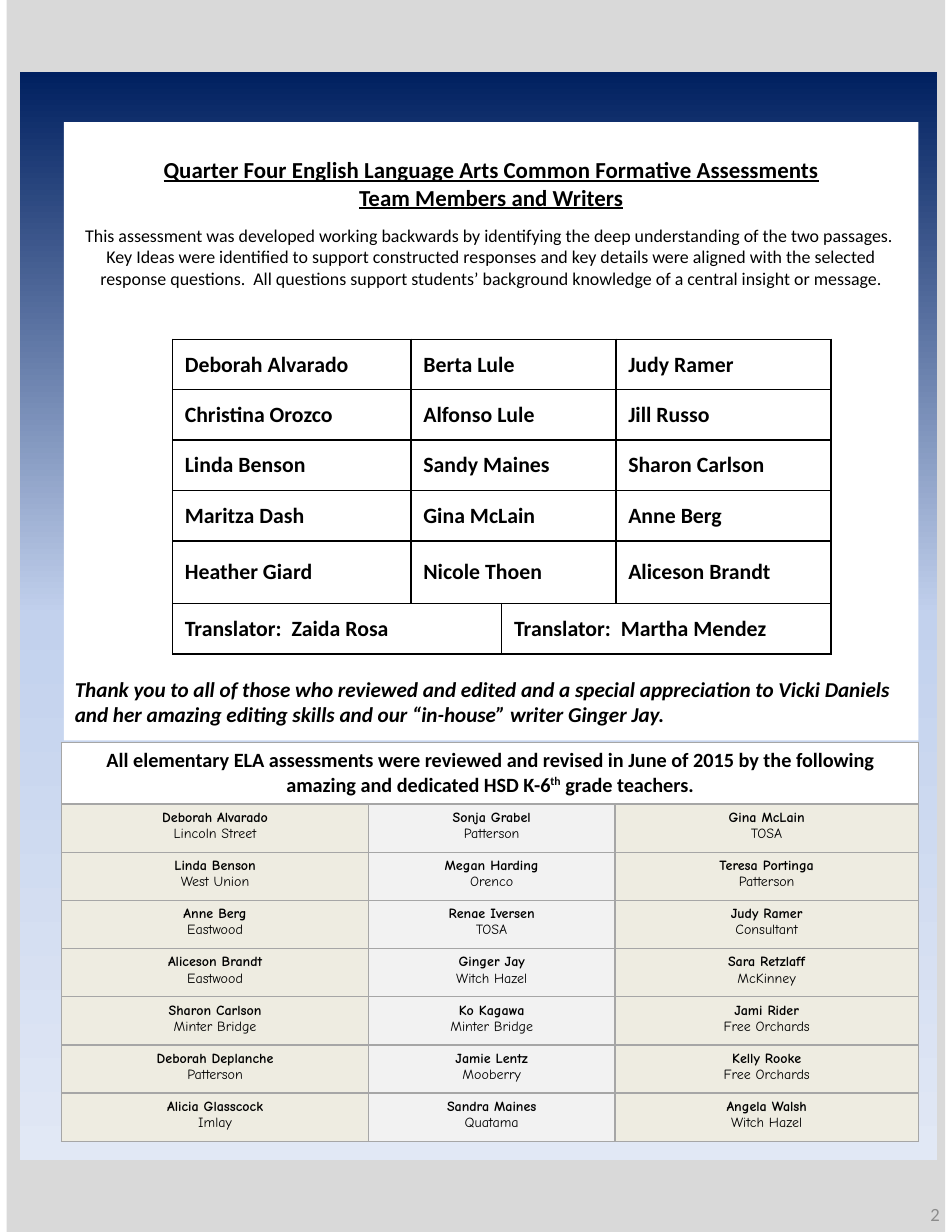
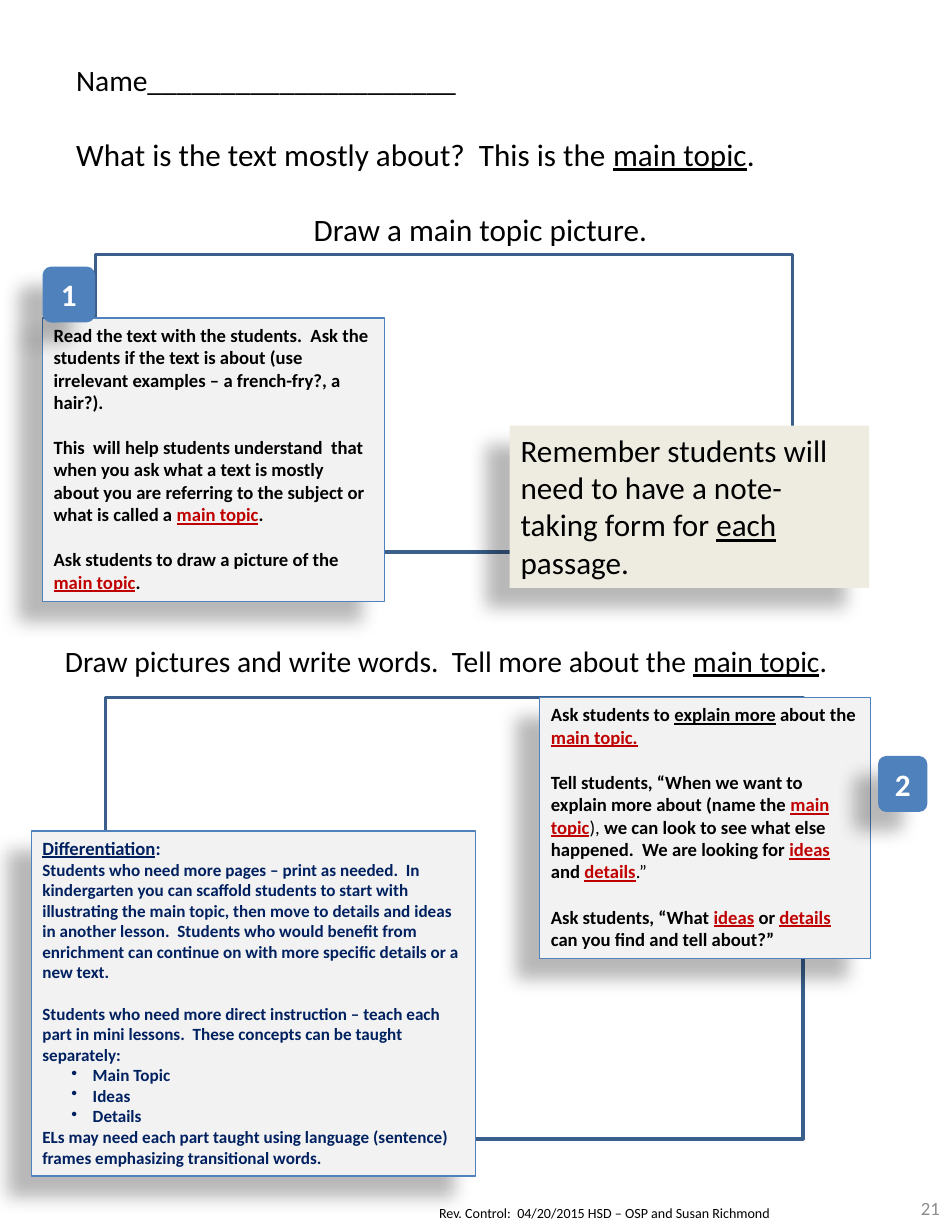
from copy import deepcopy

from lxml import etree
from pptx import Presentation
from pptx.dml.color import RGBColor
from pptx.enum.shapes import MSO_SHAPE
from pptx.enum.text import MSO_ANCHOR, PP_ALIGN
from pptx.oxml.ns import qn
from pptx.util import Inches, Pt

RECT, ROUNDED = MSO_SHAPE.RECTANGLE, MSO_SHAPE.ROUNDED_RECTANGLE
TOP, MIDDLE, BOTTOM = MSO_ANCHOR.TOP, MSO_ANCHOR.MIDDLE, MSO_ANCHOR.BOTTOM
LEFT, CENTER, RIGHT = PP_ALIGN.LEFT, PP_ALIGN.CENTER, PP_ALIGN.RIGHT

W, H = 8.5, 11
BODY, HAND = "Calibri", "Comic Neue"
COLORS = {
    "black": "000000", "white": "FFFFFF", "gray": "D9D9D9", "pale": "F2F2F2",
    "cream": "EEECE1", "number": "8C8C8C", "rule": "A6A6A6", "navy": "002060",
    "blue": "4F81BD", "frame": "3A5F8C", "red": "C00000",
    "sky": "C2D1ED", "mist": "E1E8F5",
}
BACKDROP = [(0, "navy"), (0.5, "sky"), (1, "mist")]

# Text is cut at "|"; a piece may open with one of these marks.
MARKS = {
    "u:": {"underline": True},
    "k:": {"underline": True, "color": "red"},
    "n:": {"bold": False},
    "^:": {"raised": True},
}

# Each paragraph is (text, options).
HEADING = dict(size=14.7, bold=True, underline=True, align=CENTER)
INTRO = [
    ("Quarter Four English Language Arts Common Formative Assessments", HEADING),
    ("Team Members and Writers", HEADING),
    ("This assessment was developed working backwards by identifying the deep "
     "understanding of the two passages.  Key Ideas were identified to support "
     "constructed responses and key details were aligned with the selected response "
     "questions.  All questions support students’ background knowledge of a central "
     "insight or message.", dict(size=11.5, align=CENTER, gap=8.9)),
]
THANKS = [
    ("Thank you to all of those who reviewed and edited and a special appreciation to "
     "Vicki Daniels and her amazing editing skills and our “in-house” writer Ginger Jay.",
     dict(size=13.6, bold=True, italic=True)),
]

WRITERS = [
    ("Deborah Alvarado", "Berta Lule", "Judy Ramer"),
    ("Christina Orozco", "Alfonso Lule", "Jill Russo"),
    ("Linda Benson", "Sandy Maines", "Sharon Carlson"),
    ("Maritza Dash", "Gina McLain", "Anne Berg"),
    ("Heather Giard", "Nicole Thoen", "Aliceson Brandt"),
    ("Translator:  Zaida Rosa", "Translator:  Martha Mendez"),
]
WRITER_COLS = [2.13, 0.81, 1.02, 1.92]
WRITER_ROWS = [0.45] * 4 + [0.56, 0.45]
WRITER_SPANS = {3: (1, 2, 1), 2: (2, 2)}  # grid columns taken, by names in the row

REVIEW_TITLE = ("All elementary ELA assessments were reviewed and revised in June of 2015 "
                "by the following amazing and dedicated HSD K-6|^:th| grade teachers.")
REVIEWERS = [
    [("Deborah Alvarado", "Lincoln Street"), ("Sonja Grabel", "Patterson"), ("Gina McLain", "TOSA")],
    [("Linda Benson", "West Union"), ("Megan Harding", "Orenco"), ("Teresa Portinga", "Patterson")],
    [("Anne Berg", "Eastwood"), ("Renae Iversen", "TOSA"), ("Judy Ramer", "Consultant")],
    [("Aliceson Brandt", "Eastwood"), ("Ginger Jay", "Witch Hazel"), ("Sara Retzlaff", "McKinney")],
    [("Sharon Carlson", "Minter Bridge"), ("Ko Kagawa", "Minter Bridge"), ("Jami Rider", "Free Orchards")],
    [("Deborah Deplanche", "Patterson"), ("Jamie Lentz", "Mooberry"), ("Kelly Rooke", "Free Orchards")],
    [("Alicia Glasscock", "Imlay"), ("Sandra Maines", "Quatama"), ("Angela Walsh", "Witch Hazel")],
]
REVIEW_COLS = [2.74, 2.2, 2.71]
REVIEW_ROWS = [0.55] + [0.43] * len(REVIEWERS)
REVIEW_FILLS = ["cream", "pale", "cream"]

PROMPTS = [
    ("Name_____________________", dict(size=19)),
    ("What is the text mostly about?  This is the |u:main topic|.", dict(size=20, gap=24.4)),
    ("Draw a main topic picture.", dict(size=20, gap=24.4, align=CENTER)),
]
SECOND_PROMPT = [
    ("Draw pictures and write words.  Tell more about the |u:main topic|.", dict(size=19)),
]
FOOTER = [("Rev. Control:  04/20/2015 HSD – OSP and Susan Richmond", dict(size=9))]

NOTE = dict(size=12, bold=True)
NEXT_NOTE = dict(NOTE, gap=14.6)
HELP = dict(size=11, bold=True, color="navy")
FRAMES = [(0.85, 2.27, 6.23, 2.66), (0.94, 6.23, 6.23, 3.94)]

READ_NOTE = [
    ("Read the text with the students.  Ask the students if the text is about (use "
     "irrelevant examples – a french-fry?, a hair?).", NOTE),
    ("This  will help students understand  that when you ask what a text is mostly about "
     "you are referring to the subject or what is called a |k:main topic|.", NEXT_NOTE),
    ("Ask students to draw a picture of the |k:main topic|.", NEXT_NOTE),
]
EXPLAIN_NOTE = [
    ("Ask students to |u:explain more| about the |k:main topic.", NOTE),
    ("Tell students, “When we want to explain more about (name the |k:main topic|n:), |"
     "we can look to see what else happened.  We are looking for |k:ideas| and "
     "|k:details|n:.”", NEXT_NOTE),
    ("Ask students, “What |k:ideas| or |k:details| can you find and tell about?”", NEXT_NOTE),
]
REMINDER = [
    ("Remember students will need to have a note-taking form for |u:each| passage.",
     dict(size=20)),
]
DIFFERENTIATION = [
    ("u:Differentiation|:", dict(HELP, size=12)),
    ("Students who need more pages – print as needed.  In kindergarten you can scaffold "
     "students to start with illustrating the main topic, then move to details and ideas "
     "in another lesson.  Students who would benefit from enrichment can continue on with "
     "more specific details or a new text.", HELP),
    ("Students who need more direct instruction – teach each part in mini lessons.  "
     "These concepts can be taught separately:", dict(HELP, gap=13.4)),
    *[(item, dict(HELP, bullet=True)) for item in ("Main Topic", "Ideas", "Details")],
    ("ELs may need each part taught using language (sentence) frames emphasizing "
     "transitional words.", HELP),
]


def badge_text(number):
    return [(number, dict(size=20, bold=True, color="white", align=CENTER))]


# Back to front: box, outline, fill, line, text, anchor.
CALLOUTS = [
    ((0.38, 2.84, 3.05, 2.53), RECT, "pale", "blue", READ_NOTE, TOP),
    ((0.38, 2.38, 0.47, 0.5), ROUNDED, "blue", None, badge_text("1"), MIDDLE),
    ((4.82, 6.23, 2.95, 2.33), RECT, "pale", "blue", EXPLAIN_NOTE, TOP),
    ((7.84, 6.75, 0.44, 0.5), ROUNDED, "blue", None, badge_text("2"), MIDDLE),
    ((4.55, 3.8, 3.21, 1.45), RECT, "cream", None, REMINDER, TOP),
    ((0.28, 7.42, 3.97, 3.08), RECT, "pale", "blue", DIFFERENTIATION, TOP),
]


def rgb(name):
    return RGBColor.from_string(COLORS[name])


def inches(box):
    return [Inches(v) for v in box]


def add_run(p, text, size, font=BODY, color="black", bold=False, italic=False,
            underline=False, raised=False):
    r = p.add_run()
    r.text = text
    f = r.font
    f.name, f.size, f.bold, f.italic, f.underline = font, Pt(size), bold, italic, underline
    f.color.rgb = rgb(color)
    if raised:
        r._r.get_or_add_rPr().set("baseline", "30000")


def write(tf, paragraphs):
    for i, (text, options) in enumerate(paragraphs):
        style = dict(options)
        p = tf.add_paragraph() if i else tf.paragraphs[0]
        p.alignment = style.pop("align", LEFT)
        p.space_before = Pt(style.pop("gap", 0))
        if style.pop("bullet", False):
            pPr = p._p.get_or_add_pPr()
            pPr.set("marL", str(Inches(0.45)))
            pPr.set("indent", str(Inches(-0.19)))
            etree.SubElement(pPr, qn("a:buChar"), char="•")
        for piece in text.split("|"):
            mark = MARKS.get(piece[:2])
            add_run(p, piece[2:] if mark else piece, **{**style, **(mark or {})})


def fill_frame(s, paragraphs, anchor=TOP, side=0.1, top=0.05, bottom=0.05):
    tf = s.text_frame
    tf.word_wrap = True
    tf.vertical_anchor = anchor
    tf.margin_left = tf.margin_right = Inches(side)
    tf.margin_top, tf.margin_bottom = Inches(top), Inches(bottom)
    write(tf, paragraphs)


def add_text(slide, box, paragraphs, **frame):
    fill_frame(slide.shapes.add_textbox(*inches(box)), paragraphs, **frame)


def add_box(slide, box, fill=None, line=None, width=0.75, outline=RECT):
    s = slide.shapes.add_shape(outline, *inches(box))
    s.shadow.inherit = False
    if fill:
        s.fill.solid()
        s.fill.fore_color.rgb = rgb(fill)
    else:
        s.fill.background()
    if line:
        s.line.color.rgb = rgb(line)
        s.line.width = Pt(width)
    else:
        s.line.fill.background()
    return s


def add_gradient(s, stops):
    """Fill a shape from top to bottom with three or more stops."""
    s.fill.gradient()
    s.fill.gradient_angle = 270
    gs_list = s._element.spPr.find(qn("a:gradFill")).find(qn("a:gsLst"))
    while len(gs_list) < len(stops):
        gs_list.append(deepcopy(gs_list[0]))
    for stop, (position, color) in zip(s.fill.gradient_stops, stops):
        stop.position = position
        stop.color.rgb = rgb(color)


def add_shadow(s):
    effects = s._element.spPr.find(qn("a:effectLst"))
    shadow = etree.SubElement(effects, qn("a:outerShdw"), blurRad=str(Pt(11.8)),
                              dist=str(Pt(19.7)), dir=str(141 * 60000), rotWithShape="0")
    color = etree.SubElement(shadow, qn("a:srgbClr"), val=COLORS["black"])
    etree.SubElement(color, qn("a:alpha"), val="28000")


def add_grid(slide, left, top, cols, rows, border):
    """Add a plain white table with the same border round every cell."""
    box = inches((left, top, sum(cols), sum(rows)))
    table = slide.shapes.add_table(len(rows), len(cols), *box).table
    table.first_row = table.horz_banding = False
    for column, width in zip(table.columns, cols):
        column.width = Inches(width)
    for row, height in zip(table.rows, rows):
        row.height = Inches(height)
    for cell in table.iter_cells():
        tcPr = cell._tc.get_or_add_tcPr()
        for side in "LRTB":
            ln = etree.SubElement(tcPr, qn(f"a:ln{side}"), w=str(Pt(1)))
            solid = etree.SubElement(ln, qn("a:solidFill"))
            etree.SubElement(solid, qn("a:srgbClr"), val=COLORS[border])
        paint(cell, "white")
    return table


def paint(cell, color):
    cell.fill.solid()
    cell.fill.fore_color.rgb = rgb(color)


def add_writers(slide):
    table = add_grid(slide, 1.54, 3.03, WRITER_COLS, WRITER_ROWS, "black")
    for i, names in enumerate(WRITERS):
        col = 0
        for name, span in zip(names, WRITER_SPANS[len(names)]):
            cell = table.cell(i, col)
            if span > 1:
                cell.merge(table.cell(i, col + span - 1))
            cell.vertical_anchor = MIDDLE
            cell.margin_left = cell.margin_right = Inches(0.11)
            write(cell.text_frame, [(name, dict(size=14, bold=True))])
            col += span


def add_reviewers(slide):
    table = add_grid(slide, 0.55, 6.63, REVIEW_COLS, REVIEW_ROWS, "rule")
    title = table.cell(0, 0)
    title.merge(table.cell(0, len(REVIEW_COLS) - 1))
    write(title.text_frame, [(REVIEW_TITLE, dict(size=13, bold=True, align=CENTER))])
    school_style = dict(size=9, font=HAND, align=CENTER)
    name_style = dict(school_style, bold=True)
    for i, people in enumerate(REVIEWERS, 1):
        for j, (name, school) in enumerate(people):
            cell = table.cell(i, j)
            paint(cell, REVIEW_FILLS[j])
            write(cell.text_frame, [(name, name_style), (school, school_style)])


def add_page_number(slide, number, anchor):
    style = dict(size=12, color="number", align=RIGHT)
    add_text(slide, (W - 0.92, H - 0.42, 0.92, 0.42), [(number, style)],
             anchor=anchor, side=0.11, top=0.06, bottom=0.06)


def build_team(slide):
    add_box(slide, (0.06, 0, 8.38, H), "gray")
    add_gradient(add_box(slide, (0.18, 0.64, 8.19, 9.72)), BACKDROP)
    add_page_number(slide, "2", BOTTOM)
    panel = add_box(slide, (0.57, 1.09, 7.63, 5.52), "white")
    fill_frame(panel, INTRO, top=0.3)
    add_text(slide, (0.57, 5.99, 7.63, 0.57), THANKS)
    add_writers(slide)
    add_reviewers(slide)


def build_main_topic(slide):
    add_text(slide, (3.81, 10.71, 4.25, 0.26), FOOTER, side=0.11)
    add_page_number(slide, "21", MIDDLE)
    add_text(slide, (0.57, 0.17, 7.44, 2.09), PROMPTS, side=0.11, top=0.38)
    add_text(slide, (0.47, 5.68, 7.44, 0.43), SECOND_PROMPT, side=0.11, top=0.06)
    for frame in FRAMES:
        add_box(slide, frame, line="frame", width=2)
    for box, outline, fill, line, text, anchor in CALLOUTS:
        s = add_box(slide, box, fill, line, outline=outline)
        add_shadow(s)
        fill_frame(s, text, anchor)


def main():
    prs = Presentation()
    prs.slide_width, prs.slide_height = Inches(W), Inches(H)
    for build in (build_team, build_main_topic):
        build(prs.slides.add_slide(prs.slide_layouts[6]))
    prs.save("out.pptx")


if __name__ == "__main__":
    main()
